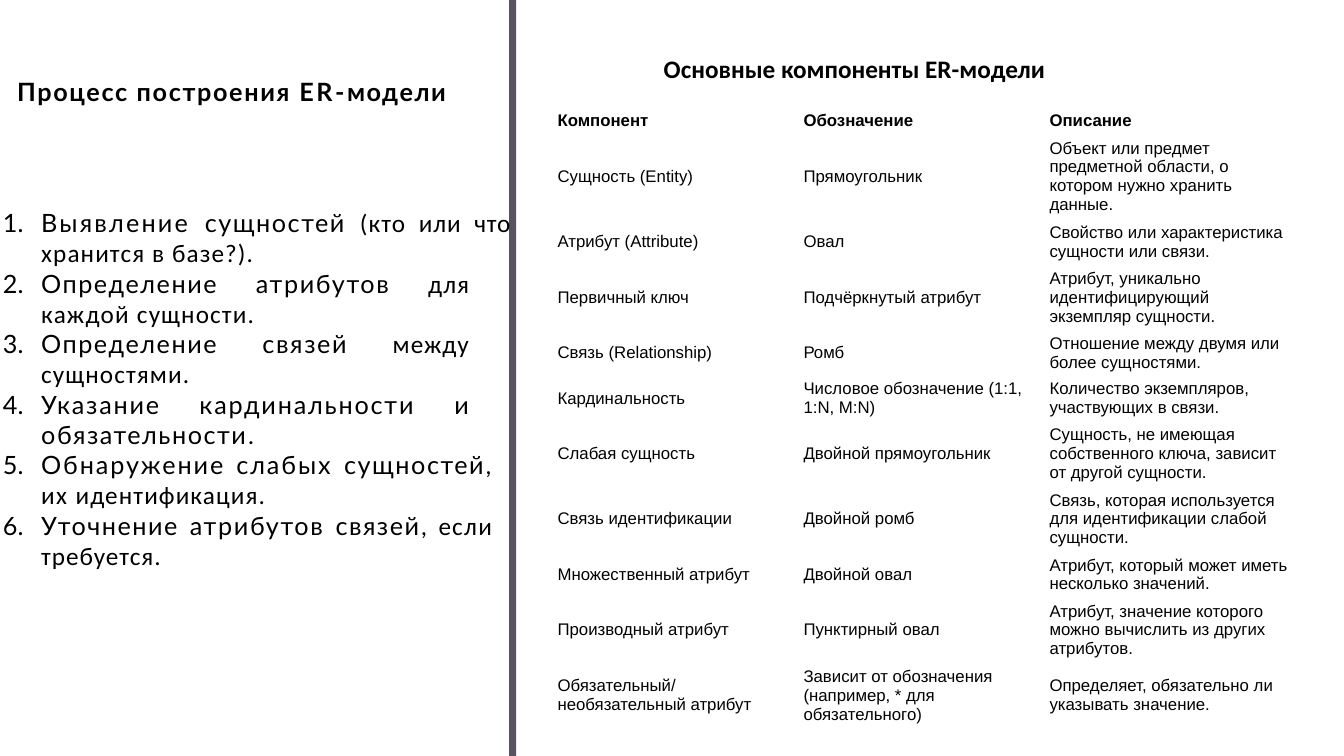
from pptx import Presentation
from pptx import util as u
from pptx.dml.color import RGBColor
from pptx.enum import shapes, text
from pptx.oxml import parse_xml
from pptx.oxml.ns import nsdecls

PX = 9144  # EMU per px, 100 px to the inch
WHITE = RGBColor(0xFF, 0xFF, 0xFF)
BLACK = RGBColor(0, 0, 0)
SLATE = RGBColor(0x58, 0x53, 0x5F)

LATO, CALIBRI, ARIAL = "Lato", "Calibri", "Arial"

PROCESS_TITLE = [("Процесс построения ", LATO, 1.2), ("ER-", LATO, 1.8), ("модели", LATO, 1.1)]

# Each step: right margin in px, then runs of (wording, font, letter spacing in points)
STEPS = [
    (0, [("Выявление ", LATO, 1.6), ("сущностей ", LATO, 1.1), ("(кто", CALIBRI, 0.8),
         (" или ", CALIBRI, 0.7), ("что ", CALIBRI, 0.6), ("хранится в базе?).", CALIBRI, 0.8)]),
    (41, [("Определение ", LATO, 1.1), ("атрибутов ", LATO, 1.2), ("для ", CALIBRI, 0.7),
          ("каждой", CALIBRI, 0.9), (" сущности.", CALIBRI, 0.8)]),
    (41, [("Определение ", LATO, 1.1), ("связей ", LATO, 1.2),
          ("между сущностями.", CALIBRI, 0.8)]),
    (41, [("Указание кардинальности ", LATO, 1.3), ("и ", LATO, 0.9),
          ("обязательности", LATO, 1.1), (".", CALIBRI, 1.1)]),
    (18, [("Обнаружение слабых ", LATO, 1.4), ("сущностей", LATO, 1.1), (", ", CALIBRI, 1.1),
          ("их ", CALIBRI, 1), ("идентификация.", CALIBRI, 0.8)]),
    (18, [("Уточнение ", LATO, 1.1), ("атрибутов ", LATO, 1.2), ("связей", LATO, 1.1),
          (", ", CALIBRI, 1.1), ("если ", CALIBRI, 0.9), ("требуется.", CALIBRI, 0.7)]),
]

# Each row: number of text lines, then the cells
COMPONENTS = [
    (1, "Компонент", "Обозначение", "Описание"),
    (4, "Сущность (Entity)", "Прямоугольник",
     "Объект или предмет предметной области, о котором нужно хранить данные."),
    (2, "Атрибут (Attribute)", "Овал", "Свойство или характеристика сущности или связи."),
    (3, "Первичный ключ", "Подчёркнутый атрибут",
     "Атрибут, уникально идентифицирующий экземпляр сущности."),
    (2, "Связь (Relationship)", "Ромб", "Отношение между двумя или более сущностями."),
    (2, "Кардинальность", "Числовое обозначение (1:1, 1:N, M:N)",
     "Количество экземпляров, участвующих в связи."),
    (3, "Слабая сущность", "Двойной прямоугольник",
     "Сущность, не имеющая собственного ключа, зависит от другой сущности."),
    (3, "Связь идентификации", "Двойной ромб",
     "Связь, которая используется для идентификации слабой сущности."),
    (2, "Множественный атрибут", "Двойной овал",
     "Атрибут, который может иметь несколько значений."),
    (3, "Производный атрибут", "Пунктирный овал",
     "Атрибут, значение которого можно вычислить из других атрибутов."),
    (3, "Обязательный/необязательный атрибут",
     "Зависит от обозначения (например, * для обязательного)",
     "Определяет, обязательно ли указывать значение."),
]


def px(*lengths):
    return [u.Emu(length * PX) for length in lengths]


def set_all(target, values):
    for name, value in values.items():
        setattr(target, name, value)


def set_insets(target, left, top, right, bottom):
    names = ("margin_left", "margin_top", "margin_right", "margin_bottom")
    set_all(target, dict(zip(names, px(left, top, right, bottom))))


def add_run(paragraph, wording, font, size, bold=False, spacing=0):
    run = paragraph.add_run()
    run.text = wording
    set_all(run.font, {"name": font, "size": u.Pt(size), "bold": bold})
    run.font.color.rgb = BLACK
    if spacing:
        run.font._element.set("spc", str(round(spacing * 100)))


def add_panel(slide, box, color, opacity=100):
    panel = slide.shapes.add_shape(shapes.MSO_SHAPE.RECTANGLE, *px(*box))
    panel.shadow.inherit = False
    panel.line.fill.background()
    panel.fill.solid()
    panel.fill.fore_color.rgb = color
    if opacity < 100:
        color_element = panel._element.spPr.find(".//{*}srgbClr")
        color_element.append(parse_xml(f'<a:alpha {nsdecls("a")} val="{opacity * 1000}"/>'))


def add_background(slide, box):
    left, top, width, height = box
    rule_width = 7
    add_panel(slide, (left + rule_width, top, width - rule_width, height), WHITE, 75)
    add_panel(slide, (left, top, rule_width, height), SLATE)


def add_title(slide, box):
    title = slide.shapes.title
    slide.shapes._spTree.append(title._element)  # in front of the panels
    set_all(title, dict(zip(("left", "top", "width", "height"), px(*box))))
    frame = title.text_frame
    set_all(frame, {"word_wrap": True, "vertical_anchor": text.MSO_ANCHOR.TOP,
                    "auto_size": text.MSO_AUTO_SIZE.SHAPE_TO_FIT_TEXT})
    set_insets(frame, 0, 1, 0, 0)
    paragraph = frame.paragraphs[0]
    paragraph.alignment = text.PP_ALIGN.CENTER
    add_run(paragraph, "Основные компоненты ER-модели", CALIBRI, 18, bold=True)


def add_component_table(slide, box):
    left, top, width, height = box
    columns = len(COMPONENTS[0]) - 1
    table = slide.shapes.add_table(len(COMPONENTS), columns, *px(*box)).table
    set_all(table, {"first_row": False, "horz_banding": False})
    for column in table.columns:
        column.width = u.Emu(width * PX // columns)
    for index, (lines, *wordings) in enumerate(COMPONENTS):
        table.rows[index].height = px(lines * 19 + 5)[0]
        for cell, wording in zip(table.rows[index].cells, wordings):
            cell.fill.background()
            cell.vertical_anchor = text.MSO_ANCHOR.MIDDLE
            set_insets(cell, 3, 2, 3, 3)
            add_run(cell.text_frame.paragraphs[0], wording, ARIAL, 12, bold=index == 0)


def add_text_box(slide, box):
    frame = slide.shapes.add_textbox(*px(*box)).text_frame
    set_all(frame, {"word_wrap": True, "auto_size": text.MSO_AUTO_SIZE.SHAPE_TO_FIT_TEXT})
    return frame


def add_steps(slide, box):
    frame = add_text_box(slide, box)
    for index, (right_margin, runs) in enumerate(STEPS):
        paragraph = frame.add_paragraph() if index else frame.paragraphs[0]
        paragraph.alignment = text.PP_ALIGN.JUSTIFY
        properties = paragraph._p.get_or_add_pPr()
        for name, length in (("marL", 39), ("marR", right_margin), ("indent", -38)):
            properties.set(name, str(length * PX))
        properties.append(parse_xml(f'<a:buAutoNum {nsdecls("a")} type="arabicPeriod"/>'))
        for wording, font, spacing in runs:
            add_run(paragraph, wording, font, 18, spacing=spacing)


def add_process_title(slide, box):
    frame = add_text_box(slide, box)
    set_insets(frame, 0, 1, 0, 0)
    paragraph = frame.paragraphs[0]
    paragraph._p.get_or_add_pPr().set("marL", str(PX))
    for wording, font, spacing in PROCESS_TITLE:
        add_run(paragraph, wording, font, 18, bold=True, spacing=spacing)


def main():
    presentation = Presentation()
    presentation.slide_width, presentation.slide_height = px(1333, 750)
    slide = presentation.slides.add_slide(presentation.slide_layouts[5])
    slide.background.fill.solid()
    slide.background.fill.fore_color.rgb = WHITE

    # Right side: components
    add_background(slide, (505, 0, 828, 750))
    add_title(slide, (571, 52, 553, 32))
    add_component_table(slide, (550, 108, 732, 593))

    # Left side: process
    add_steps(slide, (-8, 201, 525, 374))
    add_process_title(slide, (16, 75, 442, 33))

    presentation.save("out.pptx")


if __name__ == "__main__":
    main()
